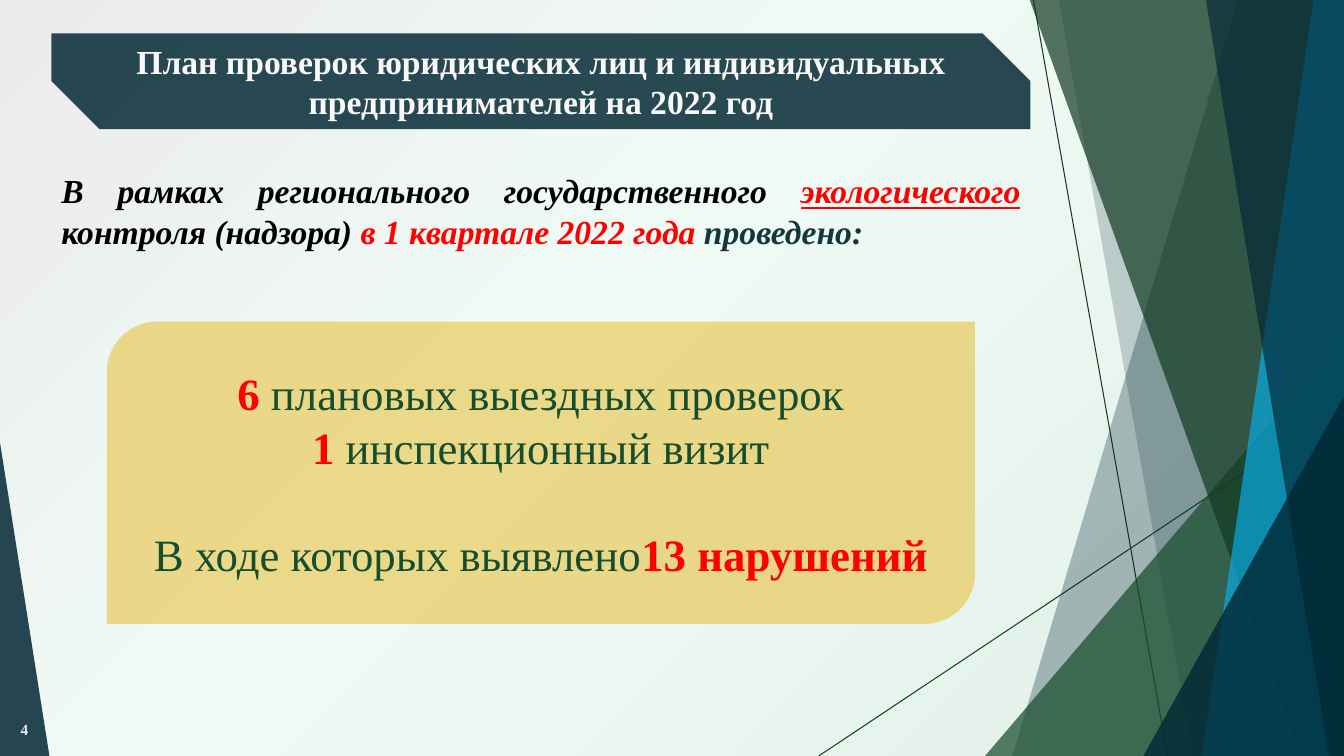
from lxml.etree import SubElement
from pptx import Presentation
from pptx.dml.color import RGBColor
from pptx.enum.shapes import MSO_CONNECTOR, MSO_SHAPE
from pptx.enum.text import MSO_ANCHOR, MSO_AUTO_SIZE, PP_ALIGN
from pptx.oxml import parse_xml
from pptx.oxml.ns import nsdecls, qn
from pptx.util import Pt

PX = 9144
WIDE, HIGH = 1333, 750
FACE = "Times New Roman"
HUES = {
    "navy": "022734", "pine": "113A22", "moss": "144126", "leaf": "174D2D",
    "sky": "09ABE4", "gold": "E6B91E", "red": "FF0000", "black": "000000",
    "teal": "13373B", "snow": "F8F8F8", "ash": "EBEBEB", "mint": "F0FAF4",
    "sage": "E1EFE9", "white": "FFFFFF",
}


class Deck:
    """Holds the style and the current slide, and draws each kind of element."""

    def __init__(self):
        self.prs = Presentation()
        self.prs.slide_width, self.prs.slide_height = WIDE * PX, HIGH * PX
        self.slide = self.prs.slides.add_slide(self.prs.slide_layouts[1])
        self.shapes = self.slide.shapes

    def hue(self, name):
        return RGBColor.from_string(HUES[name])

    def ground(self, stops):
        self.slide.background.fill.solid()
        back = self.slide.element.find(".//" + qn("p:bgPr"))
        marks = "".join(
            f'<a:gs pos="{pos * 1000}"><a:srgbClr val="{HUES[name]}">'
            f'<a:alpha val="{alpha * 1000}"/></a:srgbClr></a:gs>'
            for pos, name, alpha in stops)
        grad = parse_xml(
            f'<a:gradFill {nsdecls("a")} rotWithShape="1"><a:gsLst>{marks}</a:gsLst>'
            '<a:path path="circle"><a:fillToRect l="100000" t="100000"/></a:path>'
            '</a:gradFill>')
        back.replace(back[0], grad)

    def line(self, start, end, color):
        ends = [n * PX for n in (*start, *end)]
        line = self.shapes.add_connector(MSO_CONNECTOR.STRAIGHT, *ends)
        line.line.color.rgb = self.hue(color)
        line.line.width = Pt(0.75)
        SubElement(line.element.spPr, qn("a:effectLst"))

    def paint(self, shape, color, alpha):
        shape.shadow.inherit = False
        shape.fill.solid()
        shape.fill.fore_color.rgb = self.hue(color)
        tint = shape.element.spPr.find(".//" + qn("a:srgbClr"))
        SubElement(tint, qn("a:alpha")).set("val", str(alpha * 1000))
        shape.line.fill.background()
        return shape

    def panel(self, top, foot, color, alpha):
        pen = self.shapes.build_freeform(top, -1, scale=PX)
        pen.add_line_segments([(WIDE, -1), (WIDE, HIGH), (foot, HIGH)], close=True)
        self.paint(pen.convert_to_shape(), color, alpha)

    def block(self, kind, box, color, alpha, tweaks=()):
        shape = self.shapes.add_shape(kind, *[n * PX for n in box])
        for i, value in enumerate(tweaks):
            shape.adjustments[i] = value
        return self.paint(shape, color, alpha)

    def holder(self, index, box):
        shape = self.slide.placeholders[index]
        shape.left, shape.top, shape.width, shape.height = [n * PX for n in box]
        self.shapes.element.append(shape.element)
        return shape

    def label(self, box):
        return self.shapes.add_textbox(*[n * PX for n in box])

    def letter(self, shape, size, align, anchor, rows, gaps=None, bold=False, italic=False):
        frame = shape.text_frame
        frame.word_wrap = True
        frame.auto_size = MSO_AUTO_SIZE.NONE
        frame.vertical_anchor = anchor
        for i, row in enumerate(rows):
            para = frame.add_paragraph() if i else frame.paragraphs[0]
            props = para._p.get_or_add_pPr()
            props.set("marL", "0")
            props.set("indent", "0")
            SubElement(props, qn("a:buNone"))
            para.alignment = align
            para.space_before = Pt((gaps or {}).get(i, 0))
            font = para.font
            font.name, font.size = FACE, Pt(size)
            font.bold, font.italic = bold, italic
            if len(row) == 1:
                font.color.rgb = self.hue(row[0][1])
            for text, color, *traits in row:
                run = para.add_run()
                run.text = text
                if len(row) > 1:
                    run.font.color.rgb = self.hue(color)
                if "bold" in traits:
                    run.font.bold = True
                if "under" in traits:
                    run.font.underline = True

    def save(self):
        self.prs.save("out.pptx")


def main():
    deck = Deck()
    deck.ground([(0, "white", 0), (0, "sage", 71), (58, "mint", 100), (100, "ash", 100)])

    deck.line((1025, 0), (1158, HIGH), "pine")
    deck.line((WIDE, 403), (812, HIGH), "moss")
    tri = MSO_SHAPE.ISOSCELES_TRIANGLE
    deck.panel(1228, 1004, "navy", 30)
    deck.panel(1050, 1183, "navy", 20)
    deck.block(tri, (977, 333, 356, 417), "leaf", 72, [1])
    deck.panel(1021, 1291, "pine", 70)
    deck.panel(1303, 1192, "sky", 70)
    deck.panel(1196, 1318, "navy", 65)
    deck.block(tri, (1134, 393, 199, 357), "navy", 80, [1])
    deck.block(tri, (0, 439, 49, 311), "navy", 85, [0])

    mid = MSO_ANCHOR.MIDDLE
    deck.letter(deck.label((0, 704, 38, 40)), 11, PP_ALIGN.RIGHT, mid,
                [[("4", "ash")]], bold=True)

    band = (51, 33, 971, 95)
    deck.block(MSO_SHAPE.SNIP_2_DIAG_RECTANGLE, band, "navy", 84, [0, 0.5])
    deck.letter(deck.holder(0, band), 24, PP_ALIGN.CENTER, mid, [[
        ("План проверок юридических лиц и индивидуальных "
         "предпринимателей на 2022 год", "snow")]], bold=True)

    deck.letter(deck.holder(1, (51, 164, 971, 131)), 24, PP_ALIGN.JUSTIFY,
                MSO_ANCHOR.TOP, [[
                    ("В рамках регионального государственного ", "black"),
                    ("экологического", "red", "under"),
                    (" контроля (надзора) ", "black"),
                    ("в 1 квартале 2022 года ", "red"),
                    ("проведено:", "teal")]], bold=True, italic=True)

    card = deck.block(MSO_SHAPE.ROUND_2_DIAG_RECTANGLE, (106, 319, 861, 300), "gold", 50)
    deck.letter(card, 32, PP_ALIGN.CENTER, mid, [
        [("6 ", "red", "bold"), ("плановых выездных проверок", "leaf")],
        [("1", "red", "bold"), (" инспекционный визит", "leaf")],
        [("В ходе которых выявлено", "leaf"), ("13 нарушений", "red", "bold")],
    ], gaps={2: 38})
    deck.save()


if __name__ == "__main__":
    main()
